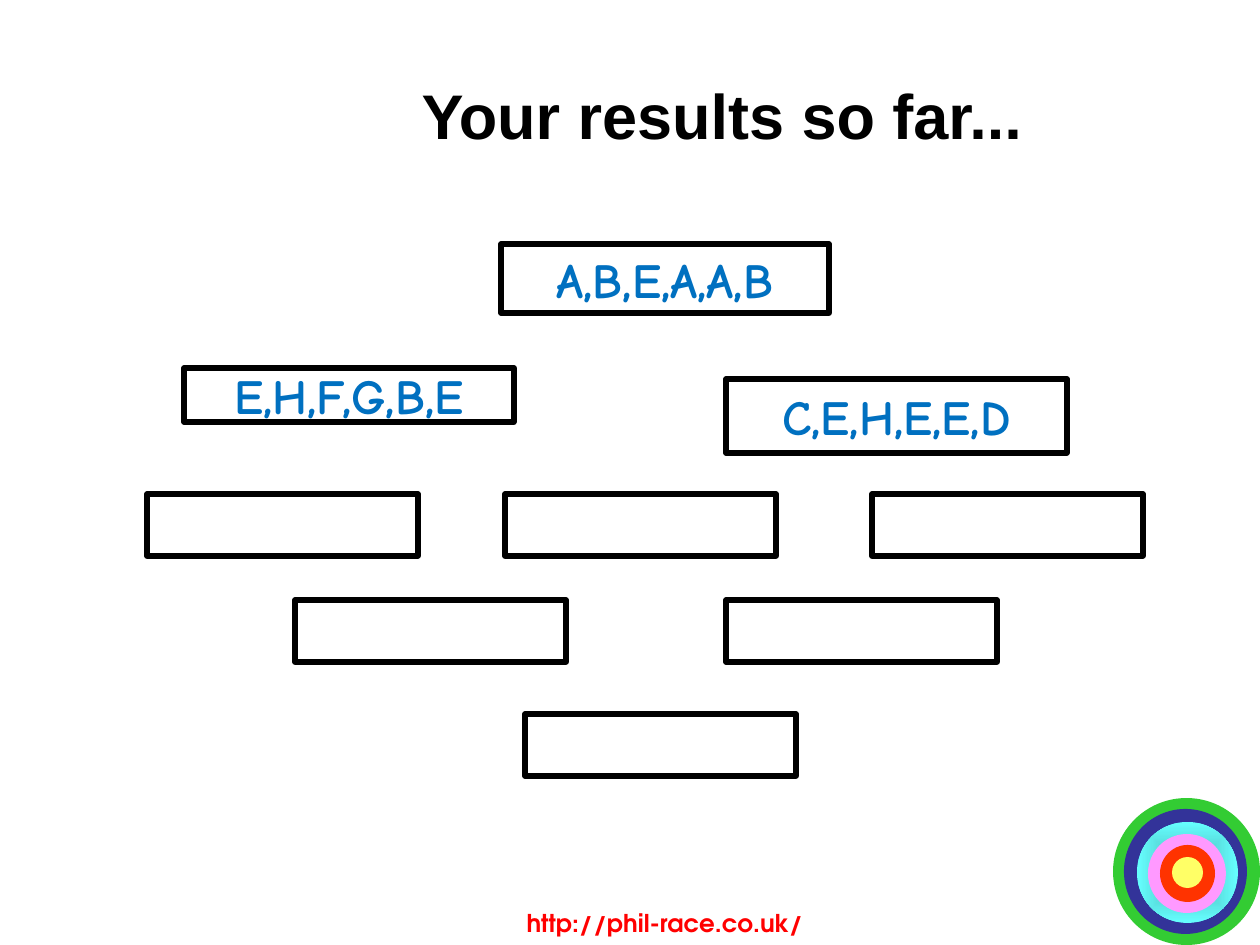
from dataclasses import dataclass

from pptx import Presentation
from pptx.dml.color import RGBColor
from pptx.enum.shapes import MSO_SHAPE
from pptx.enum.text import MSO_ANCHOR, PP_ALIGN
from pptx.oxml import parse_xml
from pptx.oxml.ns import nsdecls
from pptx.shapes.autoshape import Shape
from pptx.slide import Slide
from pptx.util import Emu, Pt

PX = 914400 / 126

COLORS = {
    "black": "000000",
    "white": "FFFFFF",
    "answer": "0070C0",
    "link": "FF0000",
    "green": "33CC33",
    "navy": "333399",
    "teal": "47B2B2",
    "cyan": "66FFFF",
    "pink": "FF99FF",
    "red": "FF3300",
    "yellow": "FFFF66",
}


@dataclass(frozen=True)
class Area:
    x: int
    y: int
    w: int
    h: int


@dataclass(frozen=True)
class Ring:
    area: Area
    color: str


@dataclass(frozen=True)
class Box:
    area: Area
    answers: str = ""
    fill: str = ""


@dataclass(frozen=True)
class Style:
    font: str
    size: int
    color: str
    spacing: float = 1.0


TITLE = Style("Arial", 36, "black", 0.75)
ANSWER = Style("Comic Neue", 28, "answer")
LINK = Style("TeX Gyre Adventor", 14, "link")

RINGS = [
    Ring(Area(1113, 798, 147, 147), "green"),
    Ring(Area(1124, 809, 123, 125), "navy"),
    Ring(Area(1137, 822, 101, 101), "cyan"),
    Ring(Area(1148, 834, 78, 79), "pink"),
    Ring(Area(1160, 845, 55, 57), "red"),
    Ring(Area(1172, 857, 31, 31), "yellow"),
]

SMALL_W, SMALL_H = 271, 62
BOXES = [
    Box(Area(501, 244, 328, 69), "A,B,E,A,A,B"),
    Box(Area(184, 368, 330, 54), "E,H,F,G,B,E"),
    Box(Area(726, 379, 341, 74), "C,E,H,E,E,D"),
    *(
        Box(Area(x, y, SMALL_W, SMALL_H), fill=fill)
        for x, y, fill in [
            (505, 494, ""),
            (872, 494, ""),
            (147, 494, ""),
            (726, 600, ""),
            (525, 714, ""),
            (295, 600, "white"),
        ]
    ),
]


def px(n: int) -> Emu:
    return Emu(round(n * PX))


def emu(area: Area) -> tuple[Emu, Emu, Emu, Emu]:
    return px(area.x), px(area.y), px(area.w), px(area.h)


def rgb(name: str) -> RGBColor:
    return RGBColor.from_string(COLORS[name])


def write(sp: Shape, text: str, style: Style, anchor: MSO_ANCHOR, wrap: bool) -> None:
    tf = sp.text_frame
    tf.word_wrap = wrap
    tf.vertical_anchor = anchor
    p = tf.paragraphs[0]
    p.text = text
    p.alignment = PP_ALIGN.CENTER
    p.line_spacing = style.spacing
    p.font.name = style.font
    p.font.size = Pt(style.size)
    p.font.bold = True
    p.font.color.rgb = rgb(style.color)


def shade_from_center(sp: Shape, inner: str, outer: str) -> None:
    sp.fill.gradient()
    for stop, name in zip(sp.fill.gradient_stops, (inner, outer)):
        stop.color.rgb = rgb(name)
    grad = sp.fill._xPr.gradFill
    for lin in grad.findall("{*}lin"):
        grad.remove(lin)
    grad.append(parse_xml(
        f'<a:path {nsdecls("a")} path="shape">'
        '<a:fillToRect l="50000" t="50000" r="50000" b="50000"/></a:path>'
    ))


def add_ring(s: Slide, ring: Ring) -> None:
    sp = s.shapes.add_shape(MSO_SHAPE.OVAL, *emu(ring.area))
    sp.shadow.inherit = False
    sp.line.fill.background()
    if ring.color == "cyan":
        shade_from_center(sp, "teal", "cyan")
    else:
        sp.fill.solid()
        sp.fill.fore_color.rgb = rgb(ring.color)


def add_box(s: Slide, box: Box) -> None:
    sp = s.shapes.add_shape(MSO_SHAPE.RECTANGLE, *emu(box.area))
    sp.shadow.inherit = False
    sp.line.color.rgb = rgb("black")
    sp.line.width = Pt(3)
    if box.fill:
        sp.fill.solid()
        sp.fill.fore_color.rgb = rgb(box.fill)
    else:
        sp.fill.background()
    if box.answers:
        write(sp, box.answers, ANSWER, MSO_ANCHOR.MIDDLE, False)


def add_text(s: Slide, area: Area, text: str, style: Style, anchor: MSO_ANCHOR) -> None:
    write(s.shapes.add_textbox(*emu(area)), text, style, anchor, True)


def main() -> None:
    prs = Presentation()
    prs.slide_width, prs.slide_height = px(1260), px(945)
    s = prs.slides.add_slide(prs.slide_layouts[6])
    for ring in RINGS:
        add_ring(s, ring)
    add_text(s, Area(483, 902, 364, 43), "http://phil-race.co.uk/", LINK, MSO_ANCHOR.TOP)
    add_text(s, Area(184, 48, 1076, 150), "Your results so far...", TITLE, MSO_ANCHOR.MIDDLE)
    for box in BOXES:
        add_box(s, box)
    prs.save("out.pptx")


if __name__ == "__main__":
    main()
